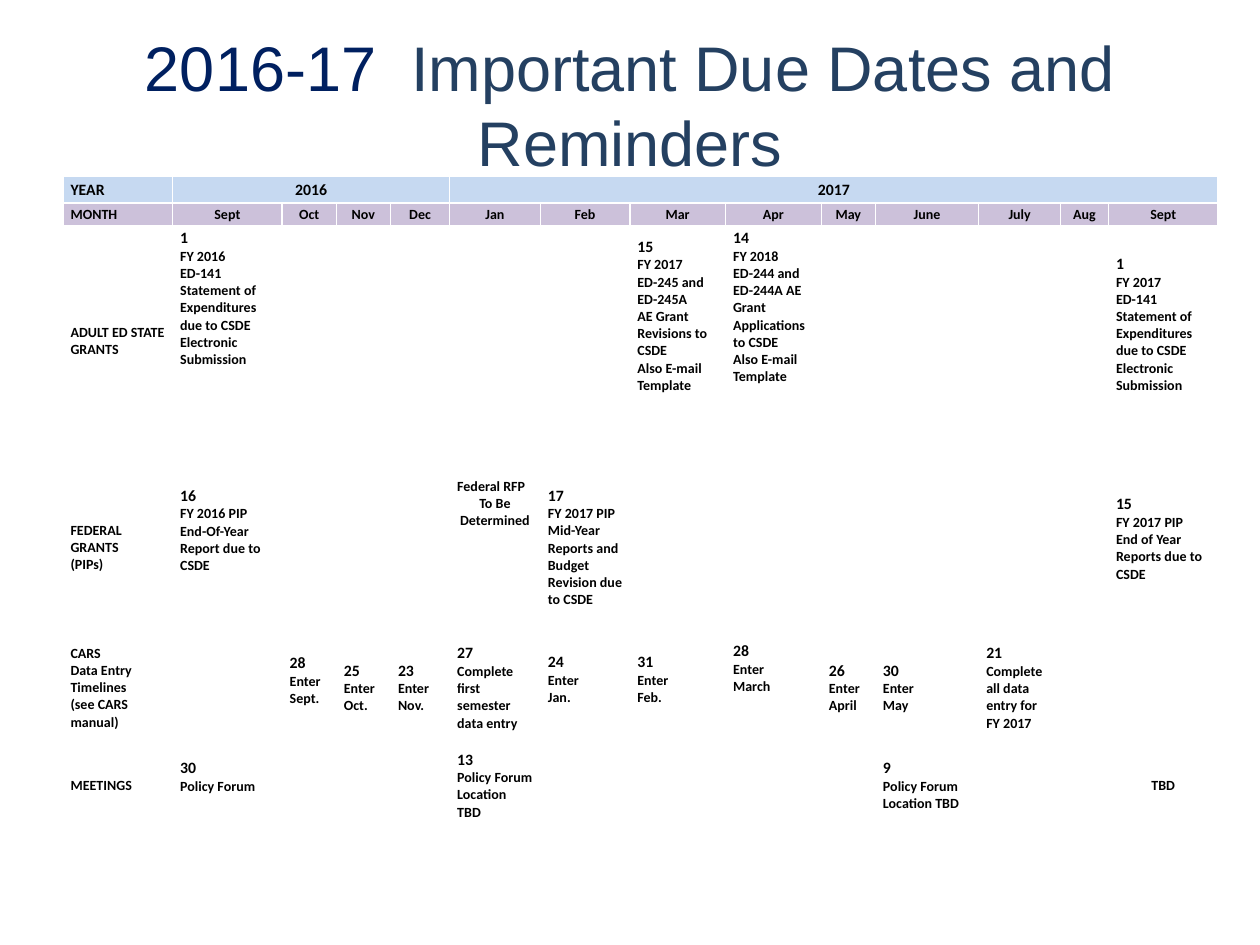
from pptx import Presentation
from pptx.dml.color import RGBColor
from pptx.enum import text
from pptx.util import Inches, Pt

NAVY = RGBColor(0x00, 0x20, 0x60)
SLATE = RGBColor(0x24, 0x40, 0x61)
YEAR_BLUE = RGBColor(0xC6, 0xD9, 0xF1)
MONTH_LILAC = RGBColor(0xCC, 0xC1, 0xDA)
BLACK = RGBColor(0, 0, 0)

COLUMN_WIDTHS = [0.87, 0.87, 0.43, 0.43, 0.47, 0.72, 0.71,
                 0.76, 0.76, 0.43, 0.82, 0.65, 0.38, 0.87]
ROW_HEIGHTS = [0.21, 0.18, 1.84, 1.43, 0.8, 0.75]
HEADER_FILLS = [YEAR_BLUE, MONTH_LILAC]
YEAR_SPANS = {"2016": (1, 4), "2017": (5, 13)}
MONTHS = ["MONTH", "Sept", "Oct", "Nov", "Dec", "Jan", "Feb", "Mar",
          "Apr", "May", "June", "July", "Aug", "Sept"]
EXPENDITURES = "ED-141 Statement of Expenditures due to CSDE Electronic Submission"
LINE_HEIGHT = 0.136

# Table row -> {column: (entry, number of text lines kept free below it)}
ENTRIES = {
    2: {
        0: ("ADULT ED STATE GRANTS", 0),
        1: (f"1\nFY 2016\n{EXPENDITURES}", 5),
        7: ("15\nFY 2017 ED-245 and ED-245A\nAE Grant Revisions to CSDE\n"
            "Also E-mail Template", 3),
        8: ("14\nFY 2018 ED-244 and ED-244A AE Grant Applications to CSDE\n"
            "Also E-mail Template", 4),
        13: (f"1\nFY 2017\n{EXPENDITURES}", 2),
    },
    3: {
        0: ("FEDERAL GRANTS\n(PIPs)", 0),
        1: ("16\nFY 2016 PIP\nEnd-Of-Year Report due to CSDE", 2),
        5: ("Federal RFP\nTo Be Determined", 5.1),
        6: ("17\nFY 2017 PIP Mid-Year Reports and Budget Revision due to CSDE", 0),
        13: ("15\nFY 2017 PIP\nEnd of Year Reports due to CSDE", 1),
    },
    4: {
        0: ("CARS\nData Entry Timelines\n(see CARS manual)", 0),
        2: ("28\nEnter Sept.", 0.9),
        3: ("25\nEnter Oct.", 0),
        4: ("23\nEnter Nov.", 0),
        5: ("27\nComplete first semester data entry", 0),
        6: ("24\nEnter\nJan.", 1),
        7: ("31\nEnter\nFeb.", 1),
        8: ("28\nEnter\nMarch", 2.25),
        9: ("26\nEnter April", 0),
        10: ("30\nEnter\nMay", 0),
        11: ("21\nComplete all data entry for\nFY 2017", 0),
    },
    5: {
        0: ("MEETINGS", 0),
        1: ("30\nPolicy Forum", 1),
        5: ("13\nPolicy Forum\nLocation TBD", 0),
        10: ("9\nPolicy Forum\nLocation TBD", 0),
        13: ("TBD", 0),
    },
}
CENTERED_LINES = {"To Be Determined", "TBD"}


def add_title(slide):
    title = slide.shapes.title
    title.left, title.top = Inches(0.5), Inches(0.3)
    title.width, title.height = Inches(9), Inches(0.99)
    frame = title.text_frame
    frame.auto_size = text.MSO_AUTO_SIZE.NONE
    frame.vertical_anchor = text.MSO_ANCHOR.MIDDLE
    frame.margin_top = Inches(0.11)
    heading = frame.paragraphs[0]
    heading.alignment = text.PP_ALIGN.CENTER
    heading.font.name, heading.font.size = "Arial", Pt(36)
    for words, color in (("2016-17  ", NAVY),
                         ("Important Due Dates and Reminders", SLATE)):
        run = heading.add_run()
        run.text = words
        run.font.color.rgb = color


def add_calendar(slide):
    """Add the empty grid with its row and column sizes and fills."""
    calendar = slide.shapes.add_table(
        len(ROW_HEIGHTS), len(COLUMN_WIDTHS), Inches(0.5), Inches(1.4),
        Inches(sum(COLUMN_WIDTHS)), Inches(sum(ROW_HEIGHTS))).table
    calendar.first_row = calendar.horz_banding = False
    for column, width in zip(calendar.columns, COLUMN_WIDTHS):
        column.width = Inches(width)
    for index, (row, height) in enumerate(zip(calendar.rows, ROW_HEIGHTS)):
        row.height = Inches(height)
        for cell in row.cells:
            if index < len(HEADER_FILLS):
                cell.fill.solid()
                cell.fill.fore_color.rgb = HEADER_FILLS[index]
            else:
                cell.fill.background()
    return calendar


def write_cell(cell, entry, size=8, centered=False, free_lines=0):
    """Write one paragraph per line; day numbers are set larger."""
    cell.vertical_anchor = text.MSO_ANCHOR.MIDDLE
    cell.margin_left = cell.margin_right = Inches(0.06)
    cell.margin_top = Inches(0.02)
    cell.margin_bottom = Inches(0.02 + free_lines * LINE_HEIGHT)
    cell.text_frame.text = entry
    for line in cell.text_frame.paragraphs:
        if centered or line.text in CENTERED_LINES:
            line.alignment = text.PP_ALIGN.CENTER
        font = line.font
        font.name, font.bold = "Calibri", True
        font.size = Pt(9 if line.text.isdigit() else size)
        font.color.rgb = BLACK


def write_headers(calendar):
    write_cell(calendar.cell(0, 0), "YEAR", size=9)
    for year, (first, last) in YEAR_SPANS.items():
        calendar.cell(0, first).merge(calendar.cell(0, last))
        write_cell(calendar.cell(0, first), year, centered=True)
    for column, month in enumerate(MONTHS):
        write_cell(calendar.cell(1, column), month, centered=column > 0)


def write_entries(calendar):
    for row, entries in ENTRIES.items():
        for column, (entry, free_lines) in entries.items():
            write_cell(calendar.cell(row, column), entry, free_lines=free_lines)


def main():
    deck = Presentation()
    deck.slide_width, deck.slide_height = Inches(10), Inches(7.5)
    slide = deck.slides.add_slide(deck.slide_layouts[5])
    add_title(slide)
    calendar = add_calendar(slide)
    write_headers(calendar)
    write_entries(calendar)
    deck.save("out.pptx")


if __name__ == "__main__":
    main()
